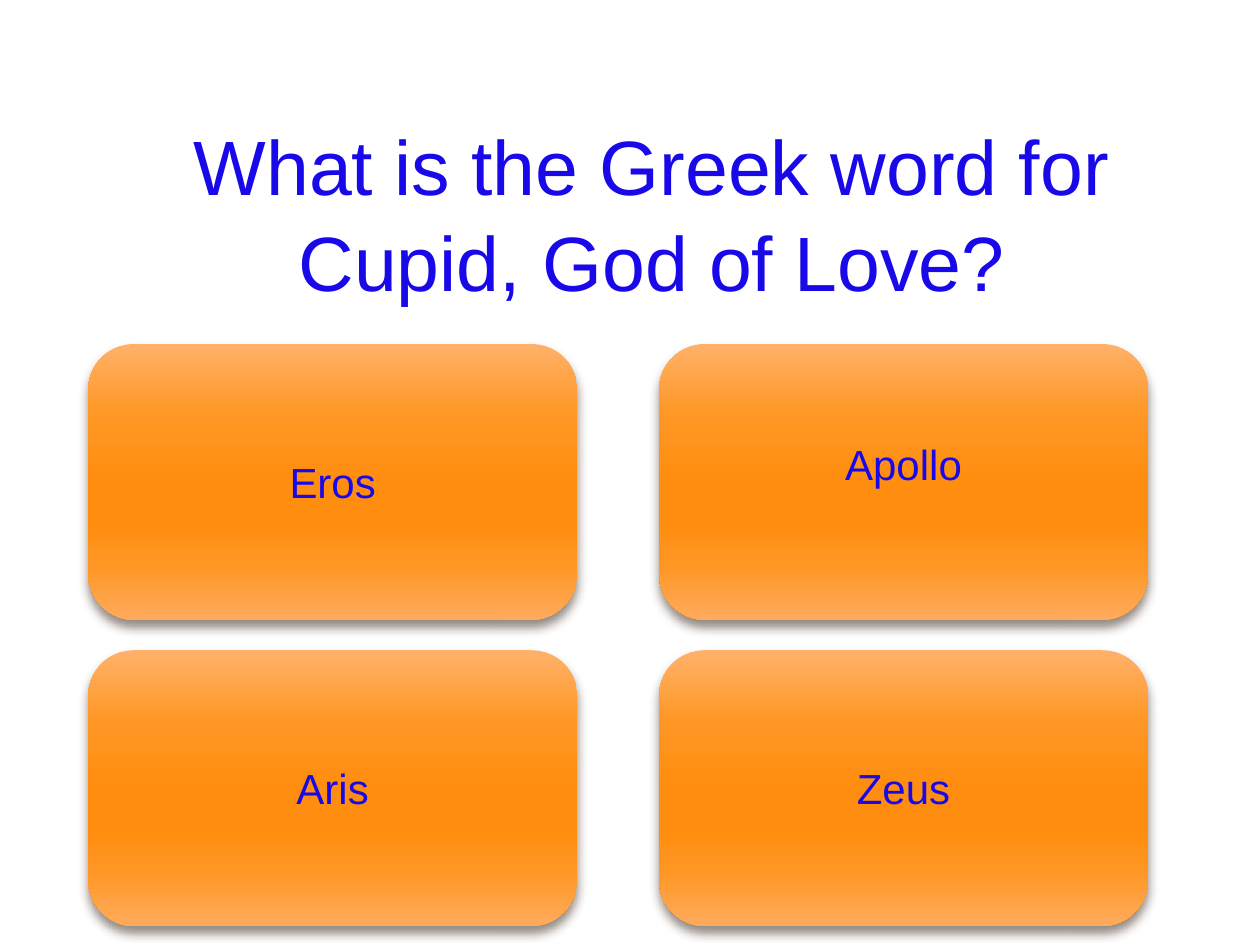
from lxml.etree import SubElement
from pptx import Presentation
from pptx.dml.color import RGBColor
from pptx.enum.shapes import MSO_SHAPE
from pptx.enum.text import MSO_ANCHOR, MSO_AUTO_SIZE, PP_ALIGN
from pptx.oxml import parse_xml
from pptx.oxml.ns import nsdecls, qn
from pptx.util import Pt

INK = "1909E9"
SHADOW = "4E3B30"
GLOW = [(0, "FFB16A"), (25, "FF9826"), (50, "FF8D0F"),
        (65, "FF8D0F"), (80, "FF9724"), (100, "FFAA5C")]
QUESTION = "What is the Greek word for Cupid, God of Love?"
ANSWERS = [("Eros", 3.6), ("Apollo", 24.6), ("Aris", 3.6), ("Zeus", 3.6)]


def color(value):
    """Return the colour for a hex string."""
    return RGBColor.from_string(value)


def write(frame, wording, size, anchor):
    """Put one centred paragraph into a text frame."""
    frame.text = wording
    frame.word_wrap = True
    frame.vertical_anchor = anchor
    paragraph = frame.paragraphs[0]
    paragraph.alignment = PP_ALIGN.CENTER
    paragraph.font.name = "Arial"
    paragraph.font.size = Pt(size)
    paragraph.font.color.rgb = color(INK)
    return paragraph


def add_glow(button):
    """Give a button its vertical gradient and soft shadow below."""
    button.fill.gradient()
    gradient = button._element.spPr.find(qn("a:gradFill"))
    stops = gradient.find(qn("a:gsLst"))
    stops.clear()
    for position, value in GLOW:
        stop = SubElement(stops, qn("a:gs"), pos=str(position * 1000))
        SubElement(stop, qn("a:srgbClr"), val=value)
    gradient.find(qn("a:lin")).set("ang", "5400000")
    button.line.fill.background()
    button._element.spPr.append(parse_xml(
        f'<a:effectLst {nsdecls("a")}>'
        f'<a:outerShdw blurRad="{Pt(6)}" dist="{Pt(4)}" dir="5400000" rotWithShape="0">'
        f'<a:srgbClr val="{SHADOW}"><a:alpha val="60000"/></a:srgbClr>'
        '</a:outerShdw></a:effectLst>'))


def place_question(slide, left, top, width, height):
    """Place the question in the title placeholder."""
    title = slide.shapes.title
    title.left, title.top, title.width, title.height = map(Pt, (left, top, width, height))
    paragraph = write(title.text_frame, QUESTION, 44, MSO_ANCHOR.TOP)
    paragraph.line_spacing = 1.04
    title.text_frame.auto_size = MSO_AUTO_SIZE.NONE


def place_answers(slide, left, top, width, height):
    """Place the answer buttons in a two by two grid."""
    button_width, button_height = 279.4, 157.6
    for index, (answer, bottom_margin) in enumerate(ANSWERS):
        row, column = divmod(index, 2)
        button = slide.shapes.add_shape(
            MSO_SHAPE.ROUNDED_RECTANGLE,
            Pt(left + column * (width - button_width)),
            Pt(top + row * (height - button_height)),
            Pt(button_width), Pt(button_height))
        add_glow(button)
        write(button.text_frame, answer, 24, MSO_ANCHOR.MIDDLE)
        button.text_frame.margin_bottom = Pt(bottom_margin)


def main():
    """Build and save the quiz slide."""
    deck = Presentation()
    deck.slide_width, deck.slide_height = Pt(720), Pt(540)
    slide = deck.slides.add_slide(deck.slide_layouts[5])
    place_question(slide, 46.8, 62, 651.6, 112)
    place_answers(slide, 50.4, 196.6, 605.6, 332.6)
    deck.save("out.pptx")


if __name__ == "__main__":
    main()
